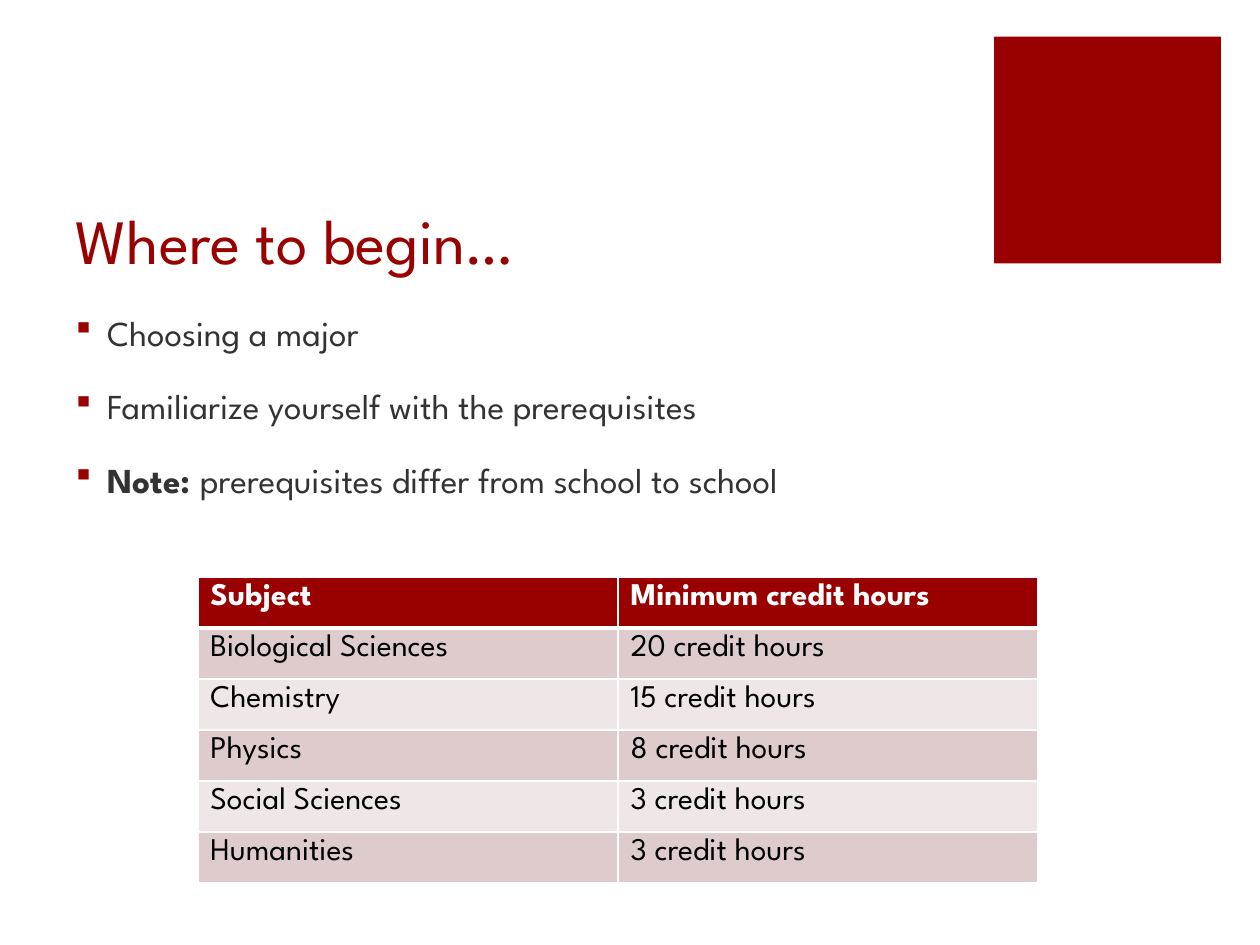
import pptx
import pptx.dml.color
import pptx.enum.shapes
import pptx.enum.text
import pptx.oxml
import pptx.oxml.ns
import pptx.util
from dataclasses import dataclass

Inches, Pt = pptx.util.Inches, pptx.util.Pt
RGB = pptx.dml.color.RGBColor.from_string
NS = pptx.oxml.ns.nsdecls("a")


@dataclass(frozen=True)
class Theme:
    font: str = "League Spartan"
    accent: str = "990000"
    body: str = "333333"
    white: str = "FFFFFF"
    black: str = "000000"
    bands: tuple = ("DECCCC", "EFE7E7")
    title_size: int = 36
    body_size: int = 20
    table_size: int = 18


theme = Theme()


def add_text(p, text, size, color, bold=False):
    r = p.add_run()
    r.text = text
    r.font.name = theme.font
    r.font.size = Pt(size)
    r.font.bold = bold
    r.font.color.rgb = RGB(color)


prs = pptx.Presentation()
prs.slide_width, prs.slide_height = Inches(10), Inches(7.5)
s = prs.slides.add_slide(prs.slide_layouts[1])
title, body = s.placeholders

# Corner square
sp = s.shapes.add_shape(pptx.enum.shapes.MSO_SHAPE.RECTANGLE,
                        Inches(7.89), Inches(0.29), Inches(1.8), Inches(1.8))
sp.shadow.inherit = False
sp.fill.solid()
sp.fill.fore_color.rgb = RGB(theme.accent)
sp.line.fill.background()

# Title and body frames
for sp, top, height, anchor in (
        (title, 1, 1.25, pptx.enum.text.MSO_ANCHOR.BOTTOM),
        (body, 2.42, 4.28, pptx.enum.text.MSO_ANCHOR.TOP)):
    sp.left, sp.top = Inches(0.5), Inches(top)
    sp.width, sp.height = Inches(7.12), Inches(height)
    tf = sp.text_frame
    tf.word_wrap = True
    tf.auto_size = pptx.enum.text.MSO_AUTO_SIZE.NONE
    tf.vertical_anchor = anchor

# Title
p = title.text_frame.paragraphs[0]
p.alignment = pptx.enum.text.PP_ALIGN.LEFT
add_text(p, "Where to begin…", theme.title_size, theme.accent)

# Bullets: each item is a list of (text, bold) runs
bullets = [
    [("Choosing a major", False)],
    [("Familiarize yourself with the prerequisites", False)],
    [("Note: ", True), ("prerequisites differ from school to school", False)],
]
tf = body.text_frame
for i, runs in enumerate(bullets):
    p = tf.paragraphs[0] if i == 0 else tf.add_paragraph()
    p.space_before = Pt(18)
    pPr = p._p.get_or_add_pPr()
    pPr.set("marL", str(Inches(0.25)))
    pPr.set("indent", str(Inches(-0.25)))
    # In Wingdings the section sign is a filled square
    for xml in (f'<a:buClr {NS}><a:srgbClr val="{theme.accent}"/></a:buClr>',
                f'<a:buFont {NS} typeface="Wingdings" charset="2"/>',
                f'<a:buChar {NS} char="§"/>'):
        pPr.append(pptx.oxml.parse_xml(xml))
    for text, bold in runs:
        add_text(p, text, theme.body_size, theme.body, bold=bold)

# Credit hours table
rows = [
    ("Subject", "Minimum credit hours"),
    ("Biological Sciences", "20 credit hours"),
    ("Chemistry", "15 credit hours"),
    ("Physics", "8 credit hours"),
    ("Social Sciences", "3 credit hours"),
    ("Humanities", "3 credit hours"),
]
table = s.shapes.add_table(len(rows), 2, Inches(1.57), Inches(4.58),
                           Inches(6.67), Inches(2.43)).table
table.horz_banding = False
for i, row in enumerate(rows):
    header = i == 0
    for j, text in enumerate(row):
        cell = table.cell(i, j)
        cell.fill.solid()
        cell.fill.fore_color.rgb = RGB(
            theme.accent if header else theme.bands[(i - 1) % 2])
        add_text(cell.text_frame.paragraphs[0], text, theme.table_size,
                 theme.white if header else theme.black, bold=header)
        # White borders, thicker under the header
        widths = {"lnL": 1, "lnR": 1, "lnT": 3 if i == 1 else 1,
                  "lnB": 3 if header else 1}
        tcPr = cell._tc.get_or_add_tcPr()
        for k, (tag, width) in enumerate(widths.items()):
            tcPr.insert(k, pptx.oxml.parse_xml(
                f'<a:{tag} {NS} w="{Pt(width)}"><a:solidFill>'
                f'<a:srgbClr val="{theme.white}"/></a:solidFill></a:{tag}>'))

prs.save("out.pptx")
